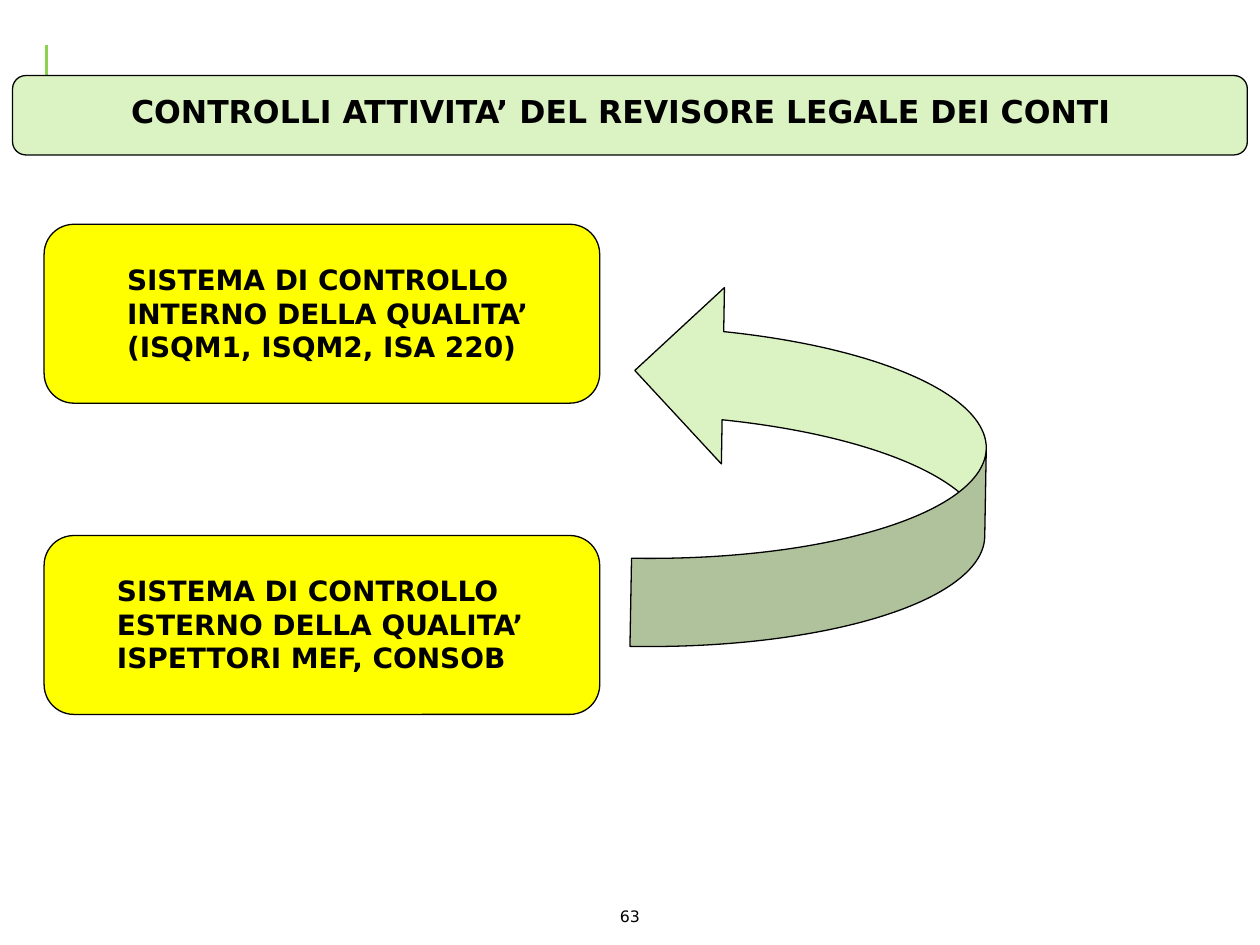
import pptx
import pptx.util
import pptx.dml.color
import pptx.enum.shapes
import pptx.enum.text
from dataclasses import dataclass
from lxml import etree

Inches, Pt = pptx.util.Inches, pptx.util.Pt
SHAPE = pptx.enum.shapes.MSO_SHAPE
ALIGN = pptx.enum.text.PP_ALIGN


@dataclass(frozen=True)
class Theme:
    font: str = "DejaVu Sans"
    ink: str = "000000"
    green: str = "DBF3C2"
    accent: str = "8CD250"
    yellow: str = "FFFF00"
    title: int = 18
    body: int = 16
    small: int = 9
    outline: float = 0.75
    rule: float = 1.5


THEME = Theme()
TITLE = "CONTROLLI ATTIVITA’ DEL REVISORE LEGALE DEI CONTI"
PAGE = "63"
# (top of box, left of text, paragraphs)
CONTROLS = [
    (1.78, 0.91, ["SISTEMA DI CONTROLLO INTERNO DELLA QUALITA’", "(ISQM1, ISQM2, ISA 220)"]),
    (4.25, 0.83, ["SISTEMA DI CONTROLLO ESTERNO DELLA QUALITA’", "ISPETTORI MEF, CONSOB"]),
]
BOX_LEFT, BOX_WIDTH, BOX_HEIGHT = 0.35, 4.41, 1.42
TEXT_WIDTH, TEXT_HEIGHT = 3.78, 0.91


def rgb(value):
    return pptx.dml.color.RGBColor.from_string(value)


def add_outlined(s, kind, box, fill):
    sp = s.shapes.add_shape(kind, *map(Inches, box))
    sp.shadow.inherit = False
    sp.fill.solid()
    sp.fill.fore_color.rgb = rgb(fill)
    sp.line.color.rgb = rgb(THEME.ink)
    sp.line.width = Pt(THEME.outline)
    return sp


def write(sp, paragraphs, size, bold=True, align=ALIGN.LEFT):
    tf = sp.text_frame
    tf.word_wrap = True
    tf.vertical_anchor = pptx.enum.text.MSO_ANCHOR.TOP
    tf.text = "\n".join(paragraphs)
    for p in tf.paragraphs:
        p.alignment = align
        p.font.name = THEME.font
        p.font.size = Pt(size)
        p.font.bold = bold
        p.font.color.rgb = rgb(THEME.ink)


def add_rule(s):
    line = s.shapes.add_connector(pptx.enum.shapes.MSO_CONNECTOR.STRAIGHT,
                                  Inches(0.37), Inches(0.36), Inches(0.37), Inches(1.11))
    line.line.color.rgb = rgb(THEME.accent)
    line.line.width = Pt(THEME.rule)
    etree.SubElement(line._element.spPr, pptx.oxml.ns.qn("a:effectLst"))


def add_title(s):
    add_outlined(s, SHAPE.ROUNDED_RECTANGLE, (0.1, 0.6, 9.8, 0.63), THEME.green)
    title = s.shapes.title
    title.left, title.top, title.width, title.height = map(Inches, (0.94, 0.68, 8.63, 0.4))
    write(title, [TITLE], THEME.title)
    title.text_frame.auto_size = pptx.enum.text.MSO_AUTO_SIZE.SHAPE_TO_FIT_TEXT
    s.shapes._spTree.append(title._element)  # in front of its band


def add_control(s, top, text_left, paragraphs):
    add_outlined(s, SHAPE.ROUNDED_RECTANGLE, (BOX_LEFT, top, BOX_WIDTH, BOX_HEIGHT), THEME.yellow)
    text_top = top + (BOX_HEIGHT - TEXT_HEIGHT) / 2
    label = s.shapes.add_textbox(*map(Inches, (text_left, text_top, TEXT_WIDTH, TEXT_HEIGHT)))
    write(label, paragraphs, THEME.body)
    label.text_frame.auto_size = pptx.enum.text.MSO_AUTO_SIZE.SHAPE_TO_FIT_TEXT


def main():
    prs = pptx.Presentation()
    prs.slide_width, prs.slide_height = Inches(10), Inches(7.5)
    s = prs.slides.add_slide(prs.slide_layouts[5])

    add_rule(s)
    number = s.shapes.add_textbox(*map(Inches, (4.72, 7.15, 0.56, 0.2)))
    write(number, [PAGE], THEME.small, bold=False, align=ALIGN.CENTER)
    add_title(s)
    for control in CONTROLS:
        add_control(s, *control)
    arrow = add_outlined(s, SHAPE.CURVED_UP_ARROW, (4.98, 2.31, 2.89, 2.8), THEME.green)
    arrow.rotation = 271

    prs.save("out.pptx")


if __name__ == "__main__":
    main()
